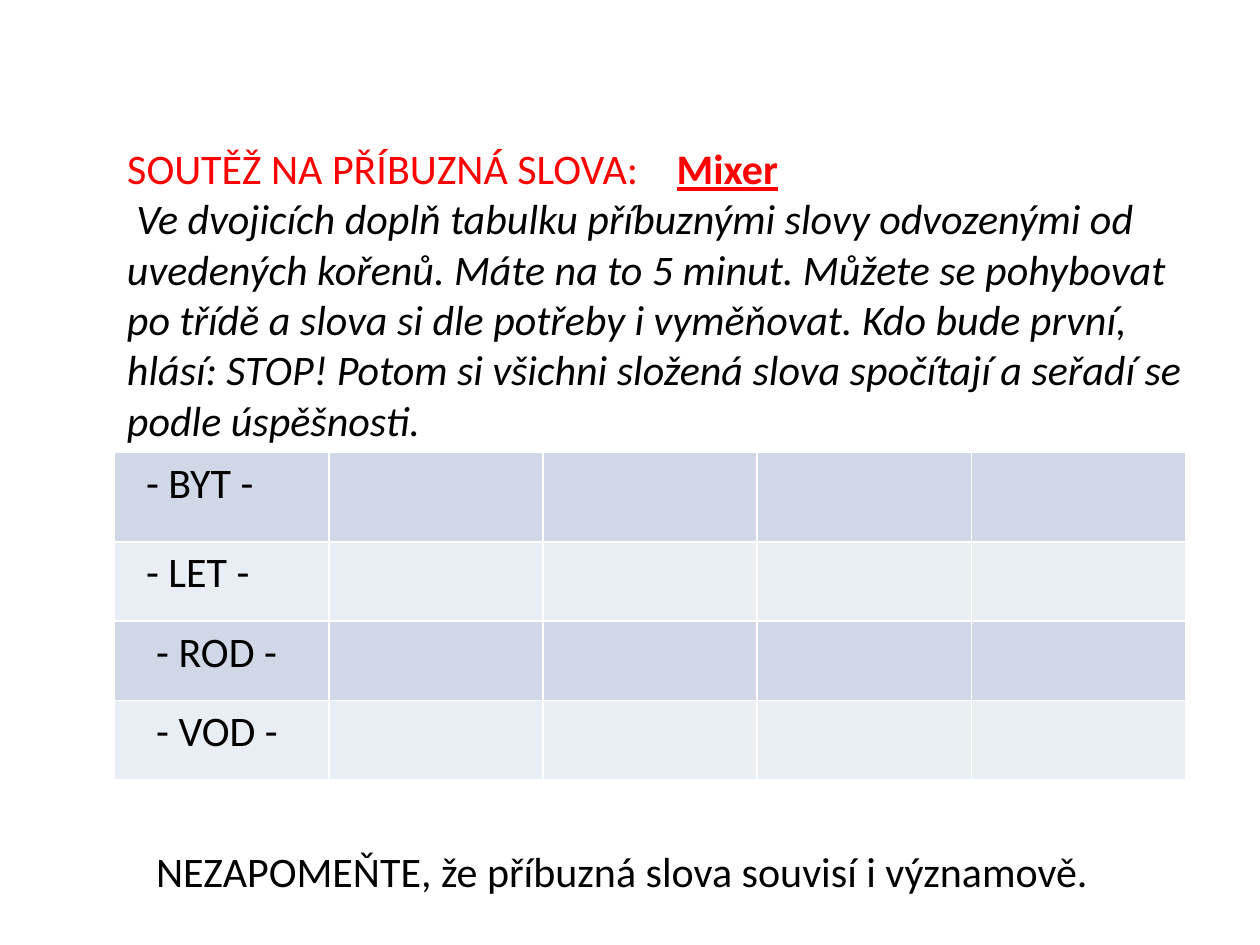
from lxml import etree
from pptx import Presentation, util as u
from pptx.dml.color import RGBColor
from pptx.enum import text as t
from pptx.oxml.ns import qn

RED, BLACK, WHITE = "FF0000", "000000", "FFFFFF"
BANDS = "D0D8E8", "E9EDF4"
LEFT = 0.91
TASK = [
    " Ve dvojicích doplň tabulku příbuznými slovy odvozenými od",
    "uvedených kořenů. Máte na to 5 minut. Můžete se pohybovat",
    "po třídě a slova si dle potřeby i vyměňovat. Kdo bude první,",
    "hlásí: STOP! Potom si všichni složená slova spočítají a seřadí se",
    "podle úspěšnosti.",
]
# Root word and its indent in the cell
ROOTS = [("- BYT -", 0.25), ("- LET -", 0.25),
         ("- ROD -", 0.33), ("- VOD -", 0.33)]
ROWS = [0.71, 0.63, 0.63, 0.63]
COLS = 5


def color(code):
    return RGBColor.from_string(code)


def add_run(para, words, code=BLACK, bold=False, italic=False, line=False):
    run = para.add_run()
    run.text = words
    font = run.font
    font.name, font.size = "Calibri", u.Pt(24)
    font.bold, font.italic, font.underline = bold, italic, line
    font.color.rgb = color(code)


def set_frame(frame):
    frame.word_wrap = True
    frame.auto_size = t.MSO_AUTO_SIZE.NONE
    frame.vertical_anchor = t.MSO_ANCHOR.TOP


def add_title(slide, box):
    title = slide.shapes.title
    title.left, title.top, title.width, title.height = map(u.Inches, box)
    set_frame(title.text_frame)
    para = title.text_frame.paragraphs[0]
    para.alignment = t.PP_ALIGN.LEFT
    tabs = etree.SubElement(para._p.get_or_add_pPr(), qn("a:tabLst"))
    etree.SubElement(tabs, qn("a:tab"), pos=str(u.Inches(4.36)), algn="l")
    add_run(para, "SOUTĚŽ NA PŘÍBUZNÁ SLOVA:\t", RED)
    add_run(para, "Mixer", RED, bold=True, line=True)


def add_text(slide, box, lines, italic=False):
    frame = slide.shapes.add_textbox(*map(u.Inches, box)).text_frame
    set_frame(frame)
    for i, words in enumerate(lines):
        para = frame.add_paragraph() if i else frame.paragraphs[0]
        add_run(para, words, italic=italic)


def add_edges(cell):
    """Draw a thin white border on all four sides, ahead of the fill."""
    props = cell._tc.get_or_add_tcPr()
    for i, side in enumerate(("lnL", "lnR", "lnT", "lnB")):
        edge = etree.Element(qn("a:" + side), w=str(u.Pt(1)))
        fill = etree.SubElement(edge, qn("a:solidFill"))
        etree.SubElement(fill, qn("a:srgbClr"), val=WHITE)
        props.insert(i, edge)


def add_grid(slide, box):
    table = slide.shapes.add_table(len(ROOTS), COLS, *map(u.Inches, box)).table
    table.first_row = False
    for col in table.columns:
        col.width = u.Inches(box[2] / COLS)
    for i, (row, high, (root, inset)) in enumerate(zip(table.rows, ROWS, ROOTS)):
        row.height = u.Inches(high)
        for cell in row.cells:
            cell.fill.solid()
            cell.fill.fore_color.rgb = color(BANDS[i % 2])
            add_edges(cell)
        first = row.cells[0]
        first.margin_left = u.Inches(inset)
        add_run(first.text_frame.paragraphs[0], root)


def main():
    deck = Presentation()
    deck.slide_width, deck.slide_height = u.Inches(10), u.Inches(7.5)
    slide = deck.slides.add_slide(deck.slide_layouts[5])
    add_title(slide, (LEFT, 1.08, 8.74, 0.5))
    add_text(slide, (LEFT, 1.48, 8.74, 2.1), TASK, italic=True)
    add_grid(slide, (LEFT, 3.59, 8.5, sum(ROWS)))
    add_text(slide, (1.14, 6.66, 7.67, 0.5),
             ["NEZAPOMEŇTE, že příbuzná slova souvisí i významově."])
    deck.save("out.pptx")


if __name__ == "__main__":
    main()
